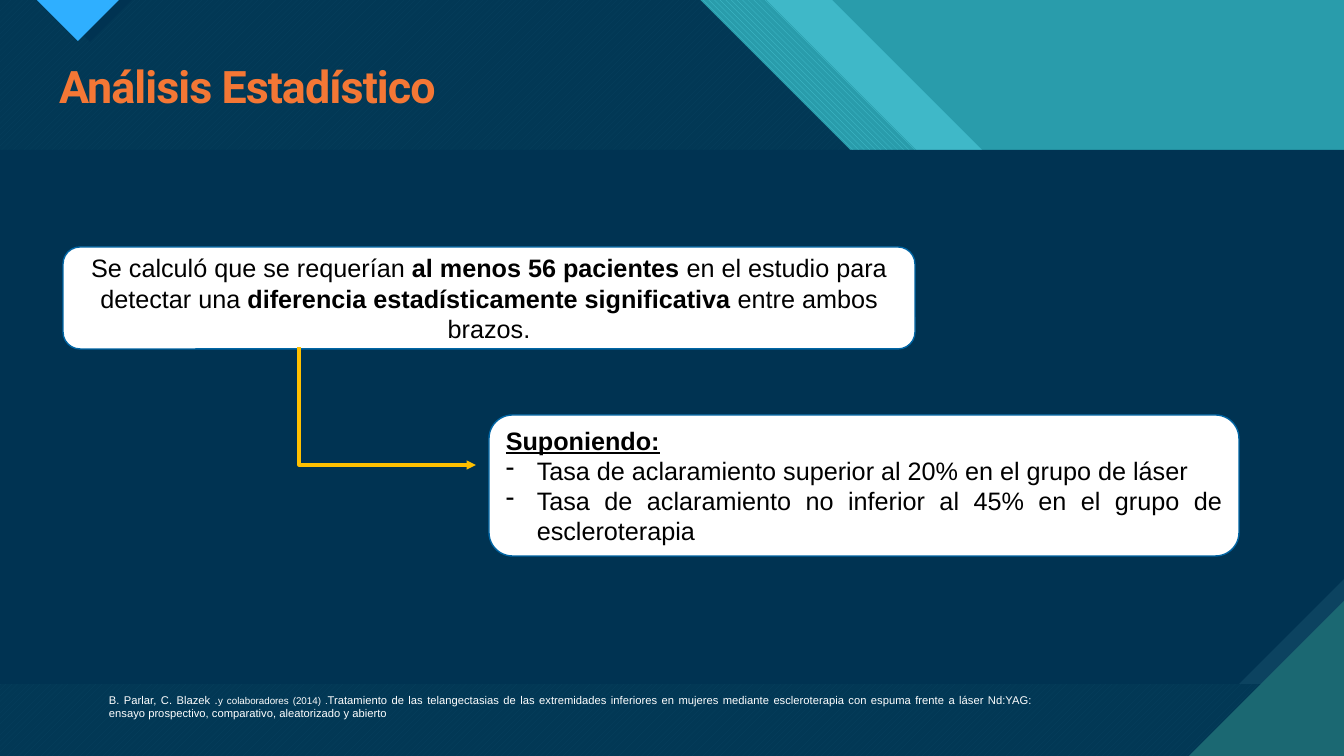
from lxml import etree
from pptx import Presentation
from pptx.dml.color import RGBColor
from pptx.enum.dml import MSO_PATTERN
from pptx.enum.shapes import MSO_CONNECTOR, MSO_SHAPE
from pptx.enum.text import MSO_ANCHOR, MSO_AUTO_SIZE, PP_ALIGN
from pptx.oxml.ns import qn
from pptx.util import Pt

PX = 914400 / 100.8
WIDTH, HEIGHT = 1344, 756
TITLE_ONLY = 5
LEFT, CENTER, JUSTIFY = PP_ALIGN.LEFT, PP_ALIGN.CENTER, PP_ALIGN.JUSTIFY
TOP, MIDDLE = MSO_ANCHOR.TOP, MSO_ANCHOR.MIDDLE
DOWN_DIAGONAL = MSO_PATTERN.WIDE_DOWNWARD_DIAGONAL
UP_DIAGONAL = MSO_PATTERN.WIDE_UPWARD_DIAGONAL
TEAL, AQUA, PINE, NAVY = "299CAB", "47C3D3", "1B6872", "003352"
BODY_TOP, BODY_BOTTOM, BODY_SNIP = 150, 684, 105
CORNER = 155


def diagonal_panel(edge):
    return [(0, 0), (edge, 0), (edge + 300, 300), (WIDTH, 300), (WIDTH, HEIGHT), (0, HEIGHT)]


def hanging_triangle(left, half):
    return [(left, 0), (left + 2 * half, 0), (left + half, half)]


BACKDROP = [
    {"points": [(0, 0), (WIDTH, 0), (WIDTH, HEIGHT), (0, HEIGHT)], "color": TEAL},
    {"points": diagonal_panel(832), "color": AQUA, "alpha": 74},
    {"points": diagonal_panel(766), "color": AQUA, "back": TEAL, "pattern": DOWN_DIAGONAL},
    {"points": diagonal_panel(700), "color": AQUA, "back": PINE, "pattern": UP_DIAGONAL},
    {"points": diagonal_panel(700), "color": NAVY, "alpha": 90},
    {"points": hanging_triangle(48, 42), "color": NAVY},
    {"points": hanging_triangle(37, 41), "color": "2FAFFF"},
    {"points": [(0, BODY_TOP), (WIDTH, BODY_TOP), (WIDTH, BODY_BOTTOM), (0, BODY_BOTTOM)],
     "color": "0C4360"},
    {"points": [(0, BODY_TOP), (WIDTH, BODY_TOP), (WIDTH, BODY_BOTTOM - BODY_SNIP),
                (WIDTH - BODY_SNIP, BODY_BOTTOM), (0, BODY_BOTTOM)], "color": NAVY},
    {"points": [(WIDTH - CORNER, HEIGHT), (WIDTH, HEIGHT), (WIDTH, HEIGHT - CORNER)],
     "color": PINE},
]

PLAIN = {"name": "Arial", "size": Pt(18), "color": "000000", "bold": False}
BOLD = {**PLAIN, "bold": True}
HEADING = {**BOLD, "underline": True}
NOTE = {"name": "Arial", "size": Pt(8), "color": "FFFFFF"}
SMALL_NOTE = {**NOTE, "size": Pt(7)}
TITLE_FONT = {"name": "Roboto", "size": Pt(32), "color": "F47735", "bold": True}

TITLE = {"box": (49, 59, 1236, 59), "align": LEFT, "anchor": MIDDLE,
         "paragraphs": [[("Análisis Estadístico", TITLE_FONT)]]}
REFERENCE = {"box": (99, 688, 944, 37), "align": JUSTIFY, "anchor": TOP, "paragraphs": [[
    ("B. Parlar, C. Blazek .", NOTE),
    ("y colaboradores (2014) .", SMALL_NOTE),
    ("Tratamiento de las telangectasias de las extremidades inferiores en mujeres mediante "
     "escleroterapia con espuma frente a láser Nd:YAG: ensayo prospectivo, comparativo, "
     "aleatorizado y abierto", NOTE)]]}
CARDS = [
    {"box": (63, 247, 852, 102), "align": CENTER, "anchor": MIDDLE, "paragraphs": [[
        ("Se calculó que se requerían ", PLAIN),
        ("al menos 56 pacientes ", BOLD),
        ("en el estudio para detectar una ", PLAIN),
        ("diferencia estadísticamente significativa ", BOLD),
        ("entre ambos brazos.", PLAIN)]]},
    {"box": (489, 415, 750, 141), "align": JUSTIFY, "anchor": MIDDLE, "bullets_from": 1,
     "paragraphs": [
         [("Suponiendo:", HEADING)],
         [("Tasa de aclaramiento superior al 20% en el grupo de láser", PLAIN)],
         [("Tasa de aclaramiento no inferior al 45% en el grupo de escleroterapia", PLAIN)]]},
]
BULLET_INDENT = 31
ARROW_START, ARROW_END = (299, 347), (476, 465)


def px(value):
    return round(value * PX)


def rgb(color):
    return RGBColor.from_string(color)


def add_panel(slide, points, color, alpha=None, back=None, pattern=None):
    builder = slide.shapes.build_freeform(*points[0], scale=PX)
    builder.add_line_segments(points[1:], close=True)
    shape = builder.convert_to_shape()
    shape.shadow.inherit = False
    shape.line.fill.background()
    if pattern:
        shape.fill.patterned()
        shape.fill.pattern = pattern
        shape.fill.fore_color.rgb = rgb(color)
        shape.fill.back_color.rgb = rgb(back)
    else:
        shape.fill.solid()
        shape.fill.fore_color.rgb = rgb(color)
    if alpha:
        color_element = shape.fill._xPr.find(".//" + qn("a:srgbClr"))
        etree.SubElement(color_element, qn("a:alpha"), val=str(alpha * 1000))


def add_bullet(paragraph):
    properties = paragraph._p.get_or_add_pPr()
    properties.set("marL", str(px(BULLET_INDENT)))
    properties.set("indent", str(-px(BULLET_INDENT)))
    etree.SubElement(properties, qn("a:buFontTx"))
    etree.SubElement(properties, qn("a:buChar"), char="-")


def write_text(shape, content):
    frame = shape.text_frame
    frame_format = {"word_wrap": True, "auto_size": MSO_AUTO_SIZE.NONE,
                    "vertical_anchor": content["anchor"]}
    for key, value in frame_format.items():
        setattr(frame, key, value)
    paragraphs = content["paragraphs"]
    for index, runs in enumerate(paragraphs):
        paragraph = frame.add_paragraph() if index else frame.paragraphs[0]
        paragraph.alignment = content["align"]
        if index >= content.get("bullets_from", len(paragraphs)):
            add_bullet(paragraph)
        for text, font_format in runs:
            run = paragraph.add_run()
            run.text = text
            for key, value in font_format.items():
                if key == "color":
                    run.font.color.rgb = rgb(value)
                else:
                    setattr(run.font, key, value)


def add_title(slide):
    title = slide.shapes.title
    for key, value in zip(("left", "top", "width", "height"), TITLE["box"]):
        setattr(title, key, px(value))
    write_text(title, TITLE)
    paragraph = title.text_frame.paragraphs[0]
    paragraph.line_spacing = 0.9
    paragraph.runs[0]._r.get_or_add_rPr().set("spc", "-70")
    slide.shapes._spTree.append(title._element)


def add_card(slide, card):
    shape = slide.shapes.add_shape(MSO_SHAPE.ROUNDED_RECTANGLE, *map(px, card["box"]))
    shape.shadow.inherit = False
    shape.fill.solid()
    shape.fill.fore_color.rgb = rgb("FFFFFF")
    shape.line.color.rgb = rgb("0065A4")
    shape.line.width = Pt(1)
    write_text(shape, card)


def add_bent_arrow(slide):
    (start_x, start_y), (end_x, end_y) = ARROW_START, ARROW_END
    middle_x, middle_y = (start_x + end_x) / 2, (start_y + end_y) / 2
    half_width, half_height = (end_y - start_y) / 2, (end_x - start_x) / 2
    connector = slide.shapes.add_connector(
        MSO_CONNECTOR.ELBOW,
        px(middle_x + half_width), px(middle_y - half_height),
        px(middle_x - half_width), px(middle_y + half_height))
    connector.line.color.rgb = rgb("FFC000")
    connector.line.width = Pt(2.25)
    properties = connector._element.spPr
    properties.find(qn("a:xfrm")).set("rot", str(270 * 60000))
    properties.find(qn("a:prstGeom")).set("prst", "bentConnector2")
    etree.SubElement(properties.find(qn("a:ln")), qn("a:tailEnd"), type="triangle")
    etree.SubElement(properties, qn("a:effectLst"))


def main():
    presentation = Presentation()
    presentation.slide_width, presentation.slide_height = px(WIDTH), px(HEIGHT)
    slide = presentation.slides.add_slide(presentation.slide_layouts[TITLE_ONLY])
    for panel in BACKDROP:
        add_panel(slide, **panel)
    add_title(slide)
    write_text(slide.shapes.add_textbox(*map(px, REFERENCE["box"])), REFERENCE)
    for card in CARDS:
        add_card(slide, card)
    add_bent_arrow(slide)
    presentation.save("out.pptx")


if __name__ == "__main__":
    main()
